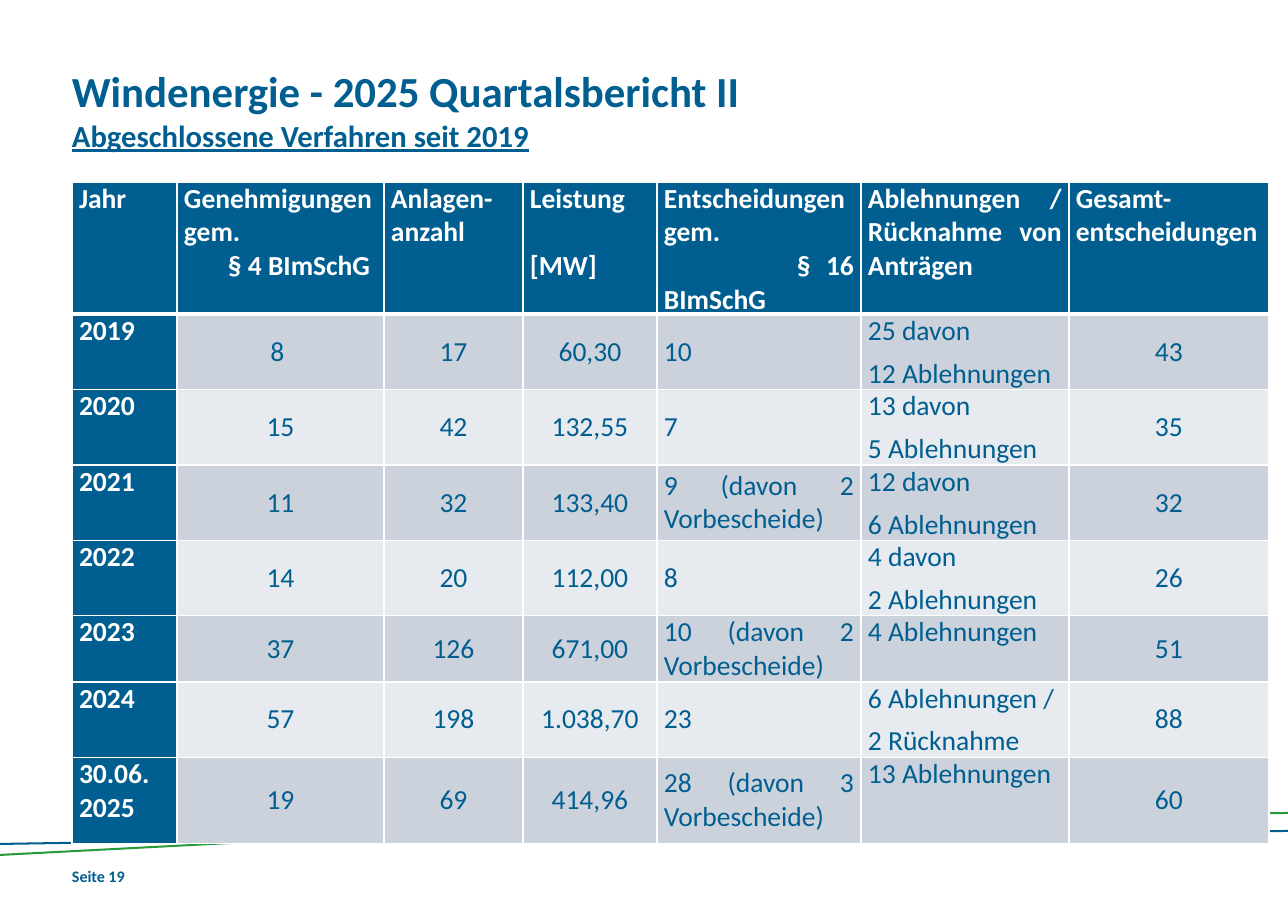
from lxml import etree
from pptx import Presentation
from pptx.dml.color import RGBColor
from pptx.enum.text import MSO_ANCHOR, PP_ALIGN
from pptx.oxml.ns import qn
from pptx.util import Pt

LEFT, MID, FULL = PP_ALIGN.LEFT, PP_ALIGN.CENTER, PP_ALIGN.JUSTIFY
TOP, CENTRE = MSO_ANCHOR.TOP, MSO_ANCHOR.MIDDLE
PX = 8298
FONT = "Calibri"
HUES = {
    "blue": "005E90",
    "green": "289B38",
    "white": "FFFFFF",
    "dark": "CCD2DB",
    "light": "E7EAEE",
}

COLS = [105, 207, 139, 134, 204, 208, 200]
ROWS = [71, 69, 61, 61, 61, 61, 61, 86]
DATA = [
    ["Jahr", "Genehmigungen gem.\v\t§ 4 BImSchG", "Anlagen-anzahl",
     "Leistung\n[MW]", "Entscheidungen gem.\v\t§ 16 BImSchG",
     "Ablehnungen / Rücknahme von Anträgen", "Gesamt-entscheidungen"],
    ["2019", "8 ", "17", "60,30", "10", "25 davon\n12 Ablehnungen", "43"],
    ["2020", "15", "42", "132,55", "7", "13 davon\n5 Ablehnungen", "35"],
    ["2021", "11", "32", "133,40", "9 (davon 2 Vorbescheide)",
     "12 davon\n6 Ablehnungen", "32"],
    ["2022", "14", "20", "112,00", "8", "4 davon\n2 Ablehnungen", "26"],
    ["2023", "37", "126", "671,00", "10 (davon 2 Vorbescheide)",
     "4 Ablehnungen", "51"],
    ["2024", "57", "198", "1.038,70", "23",
     "6 Ablehnungen /\n2 Rücknahme", "88"],
    ["30.06. 2025", "19", "69", "414,96", "28 (davon 3 Vorbescheide)",
     "13 Ablehnungen", "60"],
]
ALIGN = [FULL, MID, MID, MID, FULL, LEFT, MID]
YEAR, POWER, NOTE = 0, 3, 5
TABS = {1: 44, 4: 133}


def hue(name):
    return RGBColor.from_string(HUES[name])


def style(run, size, name, bold):
    font = run.font
    font.name, font.size, font.bold = FONT, Pt(size), bold
    font.color.rgb = hue(name)


def label(slide, box, text, sizes, wrap=True):
    frame = slide.shapes.add_textbox(*[n * PX for n in box]).text_frame
    frame.word_wrap = wrap
    frame.margin_left = frame.margin_right = 0
    frame.margin_top = frame.margin_bottom = 0
    para = frame.paragraphs[0]
    para.text = text
    for run, size in zip(para.runs, sizes):
        style(run, size, "blue", True)
    return para.runs


def wave(slide, box, name, drops):
    left, top, width, _ = box
    marks = [width, 1036, 644, 251, 0]
    line = [(left + x, top + y) for x, y in zip(marks, drops)]
    edge = [(x, y - 1) for x, y in line] + [(x, y + 1) for x, y in line[::-1]]
    form = slide.shapes.build_freeform(*edge[0], scale=PX)
    form.add_line_segments(edge[1:])
    shape = form.convert_to_shape()
    shape.shadow.inherit = False
    shape.fill.solid()
    shape.fill.fore_color.rgb = hue(name)
    shape.line.fill.background()


def rule(cell, row):
    props = cell._tc.get_or_add_tcPr()
    for side in "LRTB":
        thick = (row == 0 and side == "B") or (row == 1 and side == "T")
        line = etree.SubElement(props, qn("a:ln" + side),
                                w=str(Pt(3 if thick else 1)))
        fill = etree.SubElement(line, qn("a:solidFill"))
        etree.SubElement(fill, qn("a:srgbClr"), val=HUES["white"])


def tab(para, place):
    props = para._p.get_or_add_pPr()
    stops = etree.SubElement(props, qn("a:tabLst"))
    etree.SubElement(stops, qn("a:tab"), pos=str(place * PX), algn="l")


def fill_cell(cell, row, col, text):
    head = row == 0 or col == YEAR
    rule(cell, row)
    cell.fill.solid()
    cell.fill.fore_color.rgb = hue(
        "blue" if head else "dark" if row % 2 else "light")
    cell.margin_left = cell.margin_right = 7 * PX
    cell.margin_top = cell.margin_bottom = 0
    cell.vertical_anchor = TOP if head or col == NOTE else CENTRE
    frame = cell.text_frame
    frame.text = text
    for para in frame.paragraphs:
        para.alignment = FULL if head else ALIGN[col]
        para.space_after = Pt(6)
        if row == 0 and col in TABS:
            tab(para, TABS[col])
        for run in para.runs:
            style(run, 18, "white" if head else "blue", head)
    if row == 0 and col == POWER:
        frame.paragraphs[1].space_before = Pt(16)


def grid(slide, box):
    frame = slide.shapes.add_table(
        len(ROWS), len(COLS), *[n * PX for n in box])
    table = frame.table
    for col, width in zip(table.columns, COLS):
        col.width = width * PX
    for row, height in zip(table.rows, ROWS):
        row.height = height * PX
    frame.height = box[3] * PX
    for r, row in enumerate(DATA):
        for c, text in enumerate(row):
            fill_cell(table.cell(r, c), r, c, text)


def title(slide, box):
    runs = label(slide, box, "Windenergie - 2025 Quartalsbericht II\v"
                 "Abgeschlossene Verfahren seit 2019", [28, 20])
    runs[1].font.underline = True


def foot(slide, box):
    left, top, width, _ = box
    label(slide, (left + 72, top + 54, 78, 28), "Seite 19", [10.5], False)
    wave(slide, (left, top, width, 44), "blue", [19, 21, 24, 28, 32])
    wave(slide, (left, top, width, 44), "green", [1, 5, 14, 30, 43])


def main():
    deck = Presentation()
    deck.slide_width, deck.slide_height = 1288 * PX, 911 * PX
    slide = deck.slides.add_slide(deck.slide_layouts[6])
    foot(slide, (0, 812, 1288, 99))
    title(slide, (72, 65, 1145, 117))
    grid(slide, (72, 182, sum(COLS), 627))
    deck.save("out.pptx")


if __name__ == "__main__":
    main()
